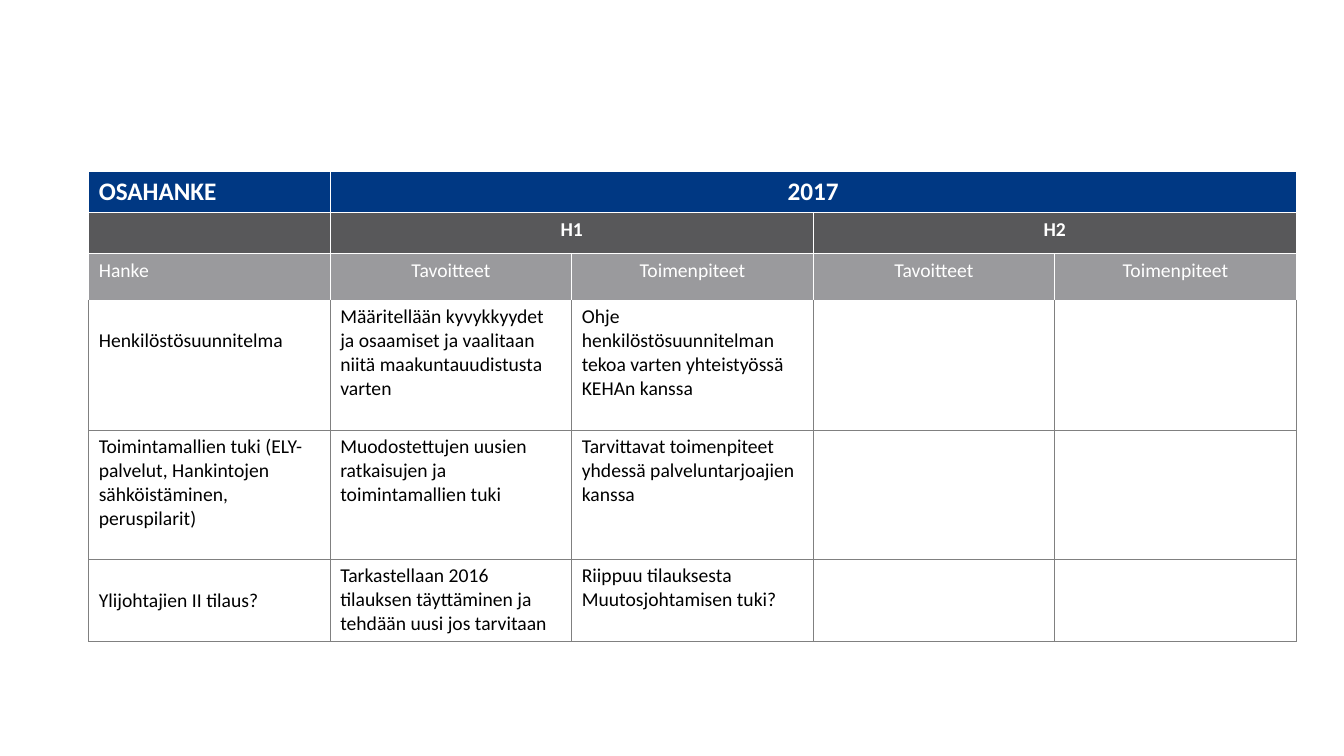
"""Build a slide with the 2017 subproject plan as a table."""
from dataclasses import dataclass

from lxml.etree import SubElement
from pptx import Presentation
from pptx.dml.color import RGBColor
from pptx.enum.text import PP_ALIGN
from pptx.oxml.ns import qn
from pptx.table import Table, _Cell
from pptx.util import Inches, Pt

SLIDE_WIDTH, SLIDE_HEIGHT = Inches(13.33), Inches(7.5)
GRID = 100
LEFT, TOP = 6.6, 22.7
COLUMN_WIDTH, COLUMN_COUNT = 17.97, 5
LINE_DROP = Inches(0.29)
FONT = "Calibri"
COLOURS = {
    "white": "FFFFFF",
    "black": "000000",
    "blue": "003883",
    "dark": "58585A",
    "light": "9A9A9D",
    "rule": "808080",
}


@dataclass(frozen=True)
class Entry:
    """A cell's paragraphs, the columns it spans and its placing."""

    lines: tuple[str, ...] = ()
    span: int = 1
    centred: bool = False
    lowered: bool = False


@dataclass(frozen=True)
class Band:
    """A table row with its height in grid rows and its look."""

    height: float
    entries: tuple[Entry, ...]
    fill: str | None = None
    size: int = 14
    bold: bool = False
    ink: str = "black"
    rule: str = "rule"
    top_rule: str = "rule"


def header(height: float, fill: str, entries: tuple[Entry, ...],
           size: int = 14, bold: bool = True) -> Band:
    """Return a filled row with white text and white rules."""
    return Band(height, entries, fill, size, bold, "white", "white", "white")


GOALS = Entry(("Tavoitteet",), centred=True)
ACTIONS = Entry(("Toimenpiteet",), centred=True)
EMPTY = Entry()

BANDS = (
    header(5.33, "blue", (
        Entry(("OSAHANKE",)),
        Entry(("2017",), span=4, centred=True),
    ), size=18),
    header(5.47, "dark", (
        EMPTY,
        Entry(("H1",), span=2, centred=True),
        Entry(("H2",), span=2, centred=True),
    )),
    header(6.13, "light", (Entry(("Hanke",)), GOALS, ACTIONS, GOALS, ACTIONS),
           bold=False),
    Band(17.2, (
        Entry(("Henkilöstösuunnitelma",), lowered=True),
        Entry(("Määritellään kyvykkyydet ja osaamiset ja vaalitaan niitä "
               "maakuntauudistusta varten",)),
        Entry(("Ohje henkilöstösuunnitelman tekoa varten yhteistyössä "
               "KEHAn kanssa",)),
        EMPTY, EMPTY,
    ), top_rule="white"),
    Band(17.07, (
        Entry(("Toimintamallien tuki (ELY-palvelut, Hankintojen "
               "sähköistäminen, peruspilarit)",)),
        Entry(("Muodostettujen uusien ratkaisujen ja toimintamallien tuki",)),
        Entry(("Tarvittavat toimenpiteet yhdessä palveluntarjoajien kanssa",)),
        EMPTY, EMPTY,
    )),
    Band(10.87, (
        Entry(("Ylijohtajien II tilaus?",), lowered=True),
        Entry(("Tarkastellaan 2016 tilauksen täyttäminen ja tehdään uusi "
               "jos tarvitaan",)),
        Entry(("Riippuu tilauksesta", "Muutosjohtamisen tuki?")),
        EMPTY, EMPTY,
    )),
)


def across(columns: float) -> int:
    """Convert grid columns to a length."""
    return round(SLIDE_WIDTH * columns / GRID)


def down(rows: float) -> int:
    """Convert grid rows to a length."""
    return round(SLIDE_HEIGHT * rows / GRID)


def colour(name: str) -> RGBColor:
    """Look up a named colour."""
    return RGBColor.from_string(COLOURS[name])


def style_cell(cell: _Cell, band: Band) -> None:
    """Draw the borders and the fill of a cell."""
    properties = cell._tc.get_or_add_tcPr()
    for side in ("lnL", "lnR", "lnT", "lnB"):
        line = SubElement(properties, qn(f"a:{side}"), w=str(Pt(1)))
        solid = SubElement(line, qn("a:solidFill"))
        name = band.top_rule if side == "lnT" else band.rule
        SubElement(solid, qn("a:srgbClr"), val=COLOURS[name])
    if band.fill is None:
        cell.fill.background()
    else:
        cell.fill.solid()
        cell.fill.fore_color.rgb = colour(band.fill)


def write_cell(cell: _Cell, entry: Entry, band: Band) -> None:
    """Write an entry's paragraphs into a cell."""
    if entry.lowered:
        cell.margin_top = LINE_DROP
    frame = cell.text_frame
    for index, line in enumerate(entry.lines):
        para = frame.add_paragraph() if index else frame.paragraphs[0]
        para.alignment = PP_ALIGN.CENTER if entry.centred else PP_ALIGN.LEFT
        span = para.add_run()
        span.text = line
        span.font.name = FONT
        span.font.size = Pt(band.size)
        span.font.bold = band.bold
        span.font.color.rgb = colour(band.ink)


def fill_row(table: Table, row: int, band: Band) -> None:
    """Set up one row of the table from its band."""
    table.rows[row].height = down(band.height)
    for column in range(COLUMN_COUNT):
        style_cell(table.cell(row, column), band)
    column = 0
    for entry in band.entries:
        cell = table.cell(row, column)
        if entry.span > 1:
            cell.merge(table.cell(row, column + entry.span - 1))
        write_cell(cell, entry, band)
        column += entry.span


def main() -> None:
    """Build and save the deck."""
    deck = Presentation()
    deck.slide_width, deck.slide_height = SLIDE_WIDTH, SLIDE_HEIGHT
    page = deck.slides.add_slide(deck.slide_layouts[6])
    table = page.shapes.add_table(
        len(BANDS), COLUMN_COUNT, across(LEFT), down(TOP),
        across(COLUMN_WIDTH * COLUMN_COUNT),
        down(sum(band.height for band in BANDS)),
    ).table
    table.first_row = table.horz_banding = False
    for column in table.columns:
        column.width = across(COLUMN_WIDTH)
    for row, band in enumerate(BANDS):
        fill_row(table, row, band)
    deck.save("out.pptx")


if __name__ == "__main__":
    main()
